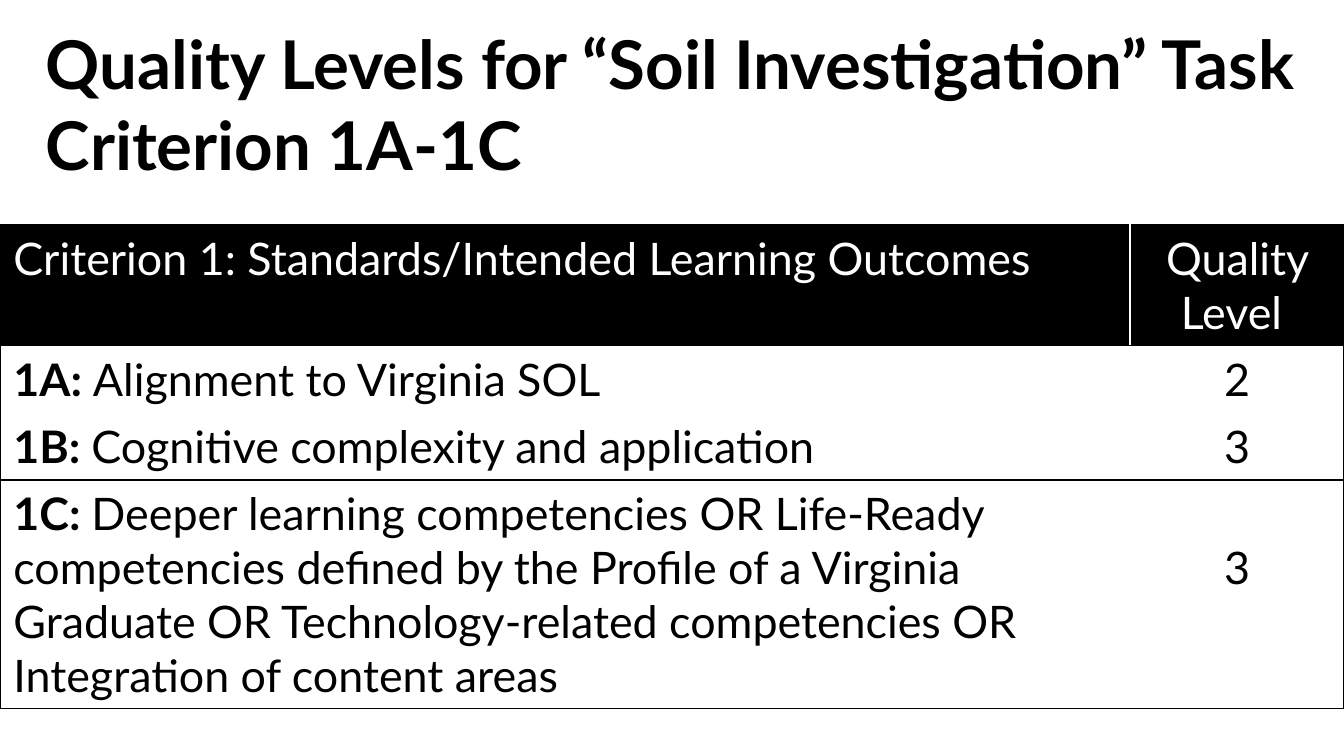
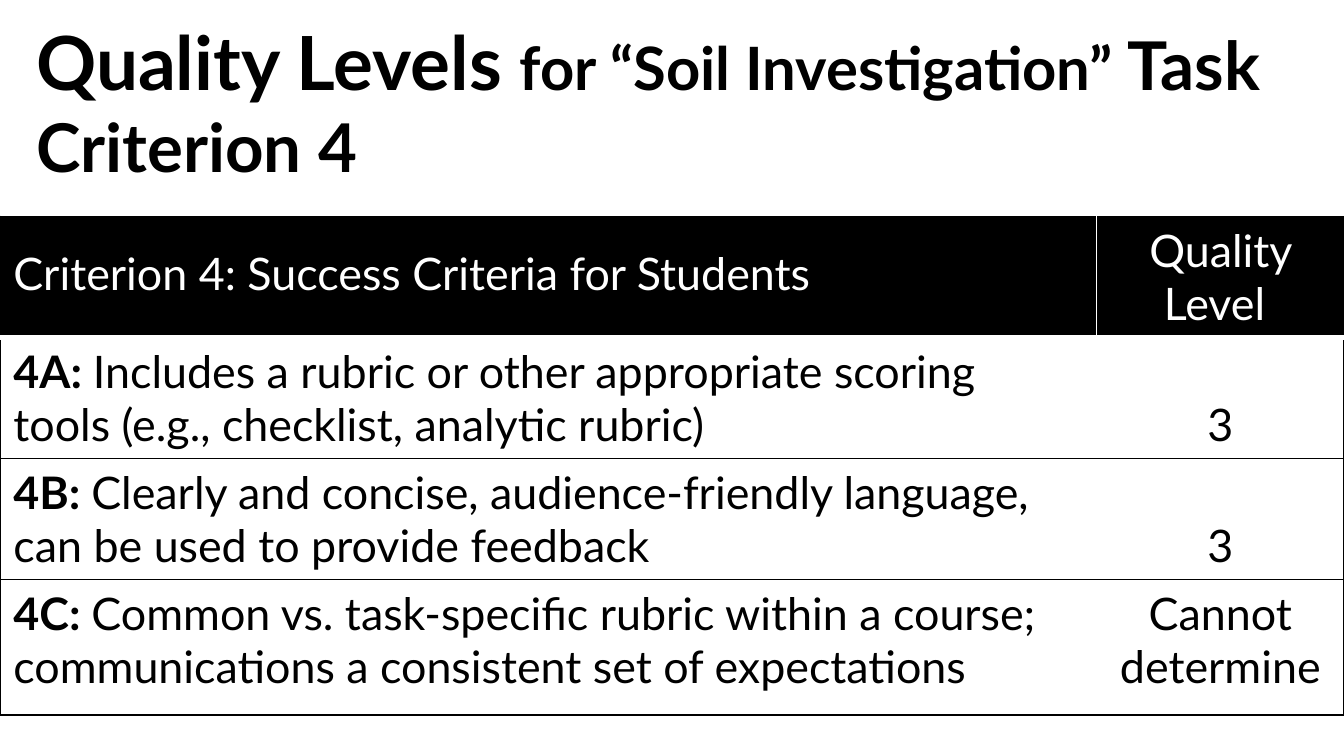
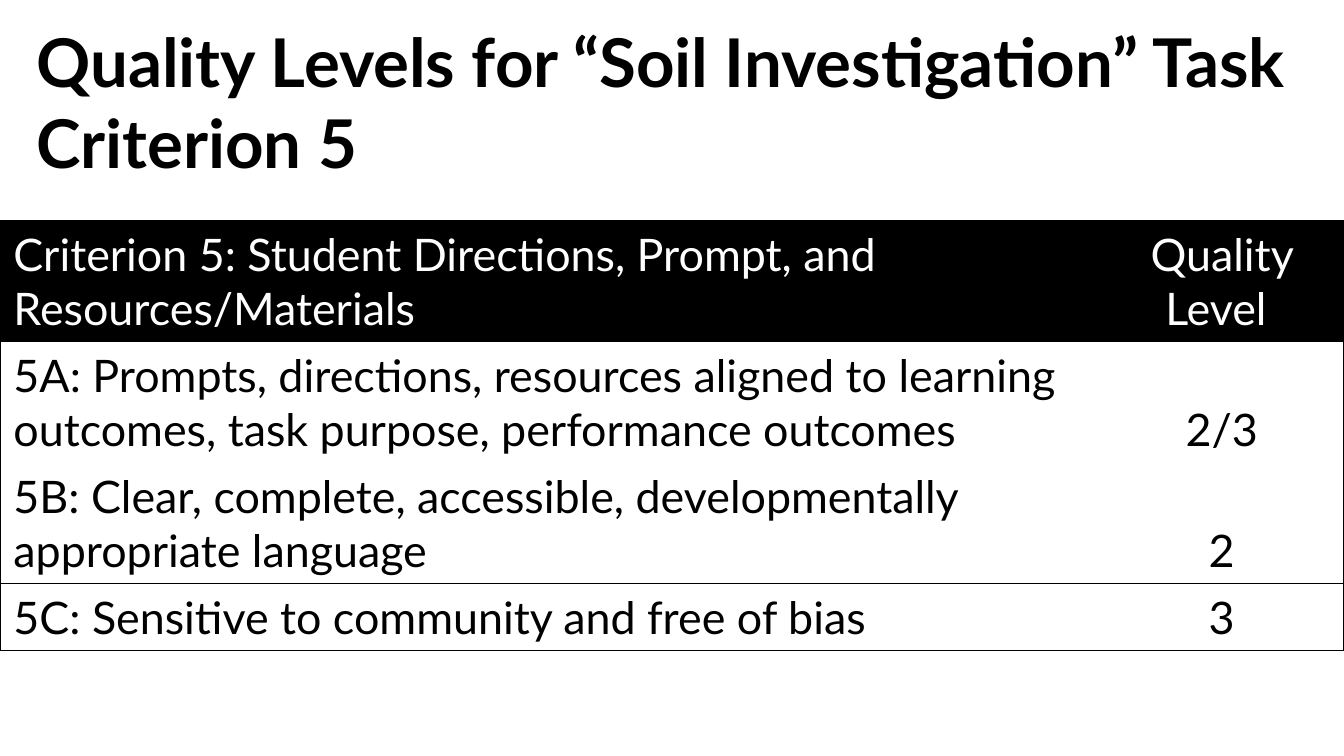
from dataclasses import dataclass

from lxml.etree import SubElement
from pptx import Presentation
from pptx.dml.color import RGBColor
from pptx.enum.text import MSO_ANCHOR as Anchor, MSO_AUTO_SIZE as AutoSize, PP_ALIGN as Align
from pptx.oxml.ns import qn
from pptx.util import Inches, Pt


@dataclass(frozen=True)
class Theme:
    font: str = "Lato"
    ink: str = "000000"
    paper: str = "FFFFFF"
    title: int = 36
    title_large: int = 40
    title_small: int = 32
    body: int = 24
    divider: float = 1
    line: float = 0.4      # height of one table text line, inches
    padding: float = 0.05  # above and below the text of a cell, inches


THEME = Theme()
SLIDE_WIDTH, SLIDE_HEIGHT = 10, 5.625
LEVEL_HEADING = "Quality Level "
NO_GRID_STYLE = "{2D5ABB26-0587-4C30-8999-92F81FD0307C}"
TITLE_ONLY = 5

# Criteria: (code, description, level, text lines in the row, lines above the level)
# ruled: rows with a line below, the heading being row 0
# divided: number of rows with a white line between the two columns
RUBRICS = [
    dict(
        title=[("Quality Levels for “Soil Investigation” Task Criterion 1A-1C", THEME.title)],
        title_box=(0.24, 9.69, 1.53),
        heading="Criterion 1: Standards/Intended Learning Outcomes",
        criteria=[
            ("1A: ", "Alignment to Virginia SOL", "2", 1, 0),
            ("1B: ", "Cognitive complexity and application", "3", 1, 0),
            ("1C: ", "Deeper learning competencies OR Life-Ready competencies defined by "
                     "the Profile of a Virginia Graduate OR Technology-related competencies "
                     "OR Integration of content areas", "3", 4, 1),
        ],
        top=1.67, level_width=1.59, rule=0.75, ruled={0, 2, 3}, divided=1,
    ),
    dict(
        title=[("Quality Levels ", THEME.title_large),
               ("for “Soil Investigation” ", THEME.title_small),
               ("Task Criterion 4", THEME.title)],
        title_box=(0.17, 9.66, 1.5),
        heading="Criterion 4: Success Criteria for Students",
        heading_drop=0.17,
        criteria=[
            ("4A: ", "Includes a rubric or other appropriate scoring tools "
                     "(e.g., checklist, analytic rubric)", "3", 2, 1),
            ("4B: ", "Clearly and concise, audience-friendly language, "
                     "can be used to provide feedback", "3", 2, 1),
            ("4C: ", "Common vs. task-specific rubric within a course; "
                     "communications a consistent set of expectations",
             "Cannot determine", 2, 0),
        ],
        top=1.61, level_width=1.84, rule=1, ruled={0, 1, 2, 3}, divided=4,
        heading_rule=(THEME.paper, 3), body_fill=THEME.paper, extra_height=0.11,
    ),
    dict(
        title=[("Quality Levels for “Soil Investigation” Task Criterion 5", THEME.title)],
        title_box=(0.17, 9.66, 1.51),
        heading="Criterion 5: Student Directions, Prompt, and Resources/Materials",
        criteria=[
            ("", "5A: Prompts, directions, resources aligned to learning outcomes, "
                 "task purpose, performance outcomes", "2/3", 2, 1),
            ("", "5B: Clear, complete, accessible, developmentally appropriate language",
             "2", 2, 1),
            ("", "5C: Sensitive to community and free of bias", "3", 1, 0),
        ],
        top=1.64, level_width=1.82, rule=0.75, ruled={0, 2, 3}, divided=0,
    ),
]


def add_run(paragraph, text, size, color, bold):
    run = paragraph.add_run()
    run.text = text
    font = run.font
    font.name, font.size, font.bold = THEME.font, Pt(size), bold
    font.color.rgb = RGBColor.from_string(color)


def add_title(slide, rubric):
    left, width, height = rubric["title_box"]
    title = slide.shapes.title
    title.left, title.top = Inches(left), 0
    title.width, title.height = Inches(width), Inches(height)
    frame = title.text_frame
    frame.auto_size, frame.word_wrap = AutoSize.NONE, True
    frame.vertical_anchor = Anchor.MIDDLE
    paragraph = frame.paragraphs[0]
    paragraph.alignment = Align.LEFT
    for text, size in rubric["title"]:
        add_run(paragraph, text, size, THEME.ink, True)


def set_borders(cell, **edges):
    """Draw each edge (L, R, T, B) as (colour, points), or hide it when None."""
    properties = cell._tc.get_or_add_tcPr()
    for side, edge in edges.items():
        border = SubElement(properties, qn(f"a:ln{side}"))
        if edge is None:
            SubElement(border, qn("a:noFill"))
            continue
        color, points = edge
        border.set("w", str(Pt(points)))
        SubElement(SubElement(border, qn("a:solidFill")), qn("a:srgbClr")).set("val", color)


def fill_cell(cell, runs, color, fill, drop=0, align=Align.LEFT):
    """Write (text, bold) runs, starting `drop` inches below the usual top."""
    if fill:
        cell.fill.solid()
        cell.fill.fore_color.rgb = RGBColor.from_string(fill)
    else:
        cell.fill.background()
    cell.margin_left = cell.margin_right = Inches(0.1)
    cell.margin_top, cell.margin_bottom = Inches(THEME.padding + drop), Inches(THEME.padding)
    paragraph = cell.text_frame.paragraphs[0]
    paragraph.alignment = align
    for text, bold in runs:
        if text:
            add_run(paragraph, text, THEME.body, color, bold)


def add_rubric(slide, rubric):
    criteria = rubric["criteria"]
    heights = [THEME.line * lines + 2 * THEME.padding
               for lines in (2, *(criterion[3] for criterion in criteria))]
    heights[-1] += rubric.get("extra_height", 0)
    table = slide.shapes.add_table(
        len(heights), 2, 0, Inches(rubric["top"]),
        Inches(SLIDE_WIDTH), Inches(sum(heights))).table
    table.horz_banding = False
    table._tbl.tblPr.find(qn("a:tableStyleId")).text = NO_GRID_STYLE
    widths = SLIDE_WIDTH - rubric["level_width"], rubric["level_width"]
    for column, width in zip(table.columns, widths):
        column.width = Inches(width)

    outline = THEME.ink, rubric["rule"]
    below = [outline if row in rubric["ruled"] else None for row in range(len(heights))]
    below[0] = rubric.get("heading_rule", outline)
    above = [outline, *below]
    for row, height in enumerate(heights):
        table.rows[row].height = Inches(height)
        divider = (THEME.paper, THEME.divider) if row < rubric["divided"] else None
        verticals = outline, divider, outline
        for column in range(2):
            set_borders(table.cell(row, column), L=verticals[column],
                        R=verticals[column + 1], T=above[row], B=below[row])

    fill_cell(table.cell(0, 0), [(rubric["heading"], False)], THEME.paper, THEME.ink,
              rubric.get("heading_drop", 0))
    fill_cell(table.cell(0, 1), [(LEVEL_HEADING, False)], THEME.paper, THEME.ink,
              align=Align.CENTER)
    body_fill = rubric.get("body_fill")
    for row, (code, description, level, _, lines_above) in enumerate(criteria, 1):
        fill_cell(table.cell(row, 0), [(code, True), (description, False)],
                  THEME.ink, body_fill)
        fill_cell(table.cell(row, 1), [(level, False)], THEME.ink, body_fill,
                  lines_above * THEME.line, Align.CENTER)


def main():
    deck = Presentation()
    deck.slide_width, deck.slide_height = Inches(SLIDE_WIDTH), Inches(SLIDE_HEIGHT)
    for rubric in RUBRICS:
        slide = deck.slides.add_slide(deck.slide_layouts[TITLE_ONLY])
        add_title(slide, rubric)
        add_rubric(slide, rubric)
    deck.save("out.pptx")


if __name__ == "__main__":
    main()
